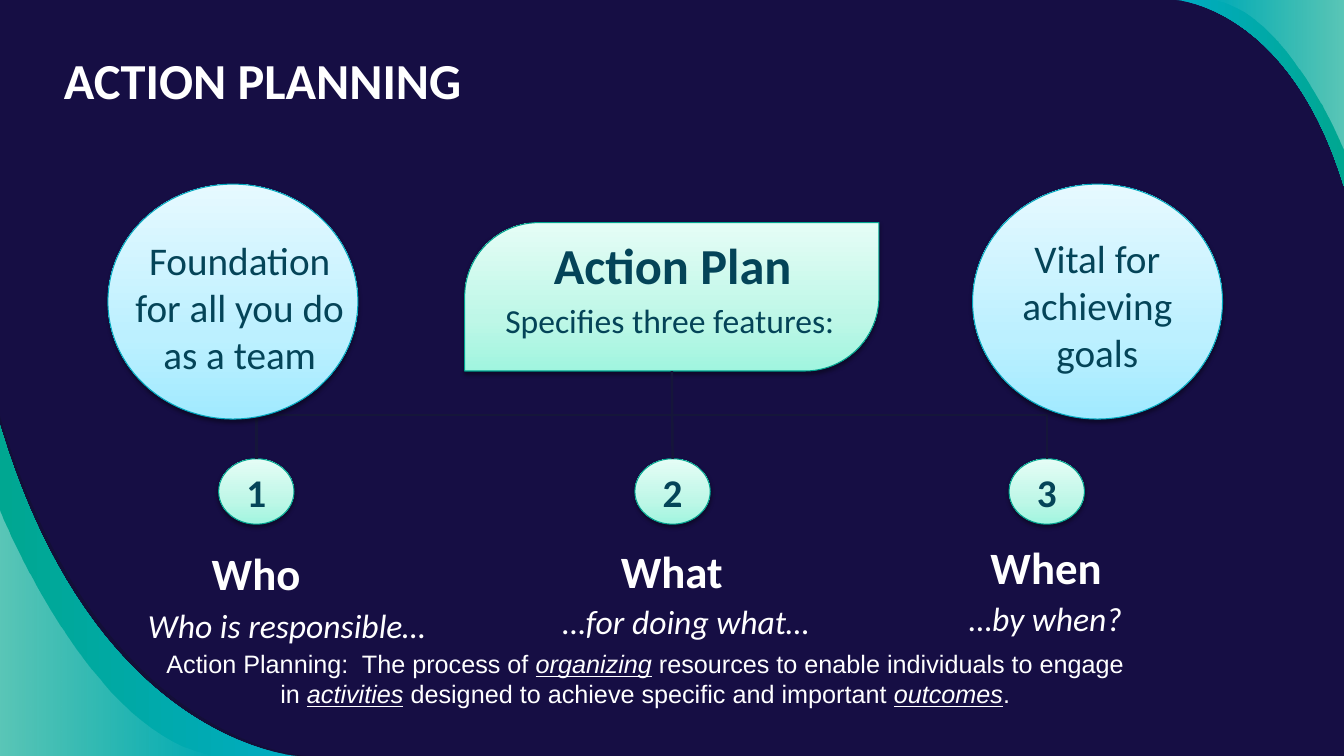
from lxml import etree
from pptx import Presentation
from pptx.dml.color import RGBColor
from pptx.enum.shapes import MSO_CONNECTOR, MSO_SHAPE
from pptx.enum.text import MSO_ANCHOR, PP_ALIGN
from pptx.oxml.ns import qn
from pptx.util import Cm, Pt

STRAIGHT, ELBOW = MSO_CONNECTOR.STRAIGHT, MSO_CONNECTOR.ELBOW
OVAL, LEAF = MSO_SHAPE.OVAL, MSO_SHAPE.ROUND_2_DIAG_RECTANGLE
TOP, MIDDLE, BOTTOM = MSO_ANCHOR.TOP, MSO_ANCHOR.MIDDLE, MSO_ANCHOR.BOTTOM
LEFT, CENTER = PP_ALIGN.LEFT, PP_ALIGN.CENTER

WIDTH, HEIGHT = 33.87, 19.05
WHITE, INK, NIGHT, WIRE = "FFFFFF", "044458", "160E44", "15163A"
MINT = [(0, "A0F5DF", 100), (35, "BEF7E7", 100), (100, "E5FDF6", 100)]
SKY = [(0, "A1EAFF", 100), (35, "BCF0FF", 100), (100, "E6F9FF", 100)]
TEAL = [(0, "00ACC2", 100), (100, "00A791", 100)]
GLOW = [(0, WHITE, 0), (100, WHITE, 36)]
SHADE = [(0, "12102F", 54), (100, "12102F", 54)]
MINT_EDGE, SKY_EDGE = "00A38E", "00A8BE"

LOWER_LEFT, UPPER_RIGHT = (0, HEIGHT), (WIDTH, 0)
SWOOSHES = [
    (LOWER_LEFT, [(0, 10.49), (2.49, 18.77), (7.7, HEIGHT), (7.7, HEIGHT)], SHADE, 180),
    (LOWER_LEFT, [(0, 10.72), (2.41, 18.77), (7.49, HEIGHT), (7.49, HEIGHT)], TEAL, 180),
    (LOWER_LEFT, [(0, 12.85), (0, 12.85), (2.31, 18.67), (5.49, HEIGHT)], GLOW, 180),
    (UPPER_RIGHT, [(29.64, 0), (29.64, 0), (32.49, 0.15), (WIDTH, 4.7)], TEAL, 0),
    (UPPER_RIGHT, [(30.51, 0), (32.44, 0.23), (WIDTH, 3.78), (WIDTH, 3.78)], GLOW, 0),
]
FEATURES = [
    ("1", 5.51, "Who", (4.23, 13.79, 4.45, 1.65),
     "Who is responsible…", (3.28, 14.91, 7.9, 2.46)),
    ("2", 16, "What", (14.07, 13.74, 5.72, 1.65),
     "…for doing what…", (13.34, 14.81, 7.9, 2.46)),
    ("3", 25.43, "When", (24.14, 13.64, 4.45, 1.65),
     "…by when?", (22.4, 14.73, 7.9, 2.46)),
]
CIRCLES = [
    (2.72, "Foundation for all you do as a team", (2.79, 5.84, 6.5, 3.78)),
    (24.51, "Vital for achieving goals", (24.85, 6.53, 5.61, 2.29)),
]
DEFINITION = [
    ("Action Planning:  The process of ", False), ("organizing", True),
    (" resources to enable individuals to engage in ", False), ("activities", True),
    (" designed to achieve specific and important ", False), ("outcomes", True),
    (".", False),
]
BADGE_TOP, BADGE_WIDTH, BADGE_HEIGHT = 11.56, 1.9, 1.65
PLAN = (11.71, 5.61, 10.44, 3.74)


def color(text):
    return RGBColor.from_string(text)


def add_xml(parent, tag, **attributes):
    child = etree.SubElement(parent, qn(tag))
    for name, value in attributes.items():
        child.set(name, str(value))
    return child


def paint(shape, stops, angle):
    shape.fill.gradient()
    gradient = shape._element.spPr.find(qn("a:gradFill"))
    stop_list = gradient.find(qn("a:gsLst"))
    for stop in list(stop_list):
        stop_list.remove(stop)
    for position, shade, opacity in stops:
        stop = add_xml(stop_list, "a:gs", pos=position * 1000)
        tone = add_xml(stop, "a:srgbClr", val=shade)
        if opacity < 100:
            add_xml(tone, "a:alpha", val=opacity * 1000)
    gradient.find(qn("a:lin")).set("ang", str(angle * 60000))


def bend(shape):
    outline = next(shape._element.iter(qn("a:moveTo"))).getparent()
    curve = etree.Element(qn("a:cubicBezTo"))
    for segment in outline.findall(qn("a:lnTo"))[:3]:
        curve.append(segment[0])
        outline.remove(segment)
    outline.insert(1, curve)


def add_swoosh(page, corner, curve, stops, angle):
    points = [(Cm(x), Cm(y)) for x, y in curve + [corner]]
    builder = page.shapes.build_freeform(*points[0], scale=1.0)
    builder.add_line_segments(points[1:], close=True)
    swoosh = builder.convert_to_shape()
    bend(swoosh)
    paint(swoosh, stops, angle)
    swoosh.line.fill.background()
    swoosh.shadow.inherit = False


def add_panel(page, kind, place, stops, edge):
    panel = page.shapes.add_shape(kind, *map(Cm, place))
    paint(panel, stops, 270)
    panel.line.color.rgb = color(edge)
    panel.line.width = Pt(0.75)
    panel.shadow.inherit = False
    effects = panel._element.spPr.find(qn("a:effectLst"))
    shadow = add_xml(effects, "a:outerShdw", blurRad=Pt(3.1), dist=Pt(1.6),
                     dir=5400000, rotWithShape=0)
    add_xml(add_xml(shadow, "a:srgbClr", val="000000"), "a:alpha", val=38000)
    return panel


def add_span(para, text, size, ink, font="Calibri", bold=False, italic=False,
             underline=False):
    span = para.add_run()
    span.text = text
    span.font.name = font
    span.font.size = Pt(size)
    span.font.color.rgb = color(ink)
    span.font.bold = bold
    span.font.italic = italic
    span.font.underline = underline


def prepare(box, anchor=TOP, align=CENTER, before=0, after=0, inset=0.33):
    frame = box.text_frame
    frame.word_wrap = True
    frame.vertical_anchor = anchor
    frame.margin_left = frame.margin_right = Cm(inset)
    frame.margin_top = frame.margin_bottom = Cm(0.33)
    para = frame.paragraphs[0]
    para.alignment = align
    para.space_before, para.space_after = Pt(before), Pt(after)
    return para


def add_label(page, place, text, size, ink, anchor=TOP, before=0, after=0, **style):
    box = page.shapes.add_textbox(*map(Cm, place))
    add_span(prepare(box, anchor, before=before, after=after), text, size, ink, **style)


def add_title(page, text):
    title = page.shapes.title
    title.left, title.top, title.width, title.height = map(Cm, (1.28, 0.9, 26.06, 2.34))
    add_span(prepare(title, align=LEFT), text, 36, WHITE, bold=True)


def add_wire(page, kind, start, end):
    wire = page.shapes.add_connector(kind, *map(Cm, start + end))
    wire.line.color.rgb = color(WIRE)
    wire.line.width = Pt(1.75)
    add_xml(wire._element.spPr, "a:effectLst")
    return wire


def add_branch(page, start, end):
    drop, reach = end[1] - start[1], abs(end[0] - start[0])
    middle_x, middle_y = (start[0] + end[0]) / 2, (start[1] + end[1]) / 2
    side = 1 if end[0] > start[0] else -1
    wire = add_wire(page, ELBOW,
                    (middle_x + side * drop / 2, middle_y - reach / 2),
                    (middle_x - side * drop / 2, middle_y + reach / 2))
    turn = 270 if side > 0 else 90
    wire._element.spPr.find(qn("a:xfrm")).set("rot", str(turn * 60000))


def add_features(page):
    badges = []
    for number, left, heading, heading_place, detail, detail_place in FEATURES:
        add_label(page, detail_place, detail, 24, WHITE, after=21.3, italic=True)
        add_label(page, heading_place, heading, 32, WHITE, BOTTOM, bold=True)
        badge = add_panel(page, OVAL, (left, BADGE_TOP, BADGE_WIDTH, BADGE_HEIGHT),
                          MINT, MINT_EDGE)
        add_span(prepare(badge, MIDDLE), number, 28, INK, bold=True)
        badges.append(badge)
    root = (PLAN[0] + PLAN[2] / 2, PLAN[1] + PLAN[3])
    who, what, when = [(feature[1] + BADGE_WIDTH / 2, BADGE_TOP) for feature in FEATURES]
    add_branch(page, root, who)
    add_branch(page, root, when)
    add_wire(page, STRAIGHT, root, what).end_connect(badges[1], 0)


def add_definition(page):
    box = page.shapes.add_textbox(*map(Cm, (3.74, 16.21, 25.04, 1.8)))
    para = prepare(box, before=8, inset=0.25)
    box.text_frame.margin_top = box.text_frame.margin_bottom = Cm(0.13)
    for text, key in DEFINITION:
        add_span(para, text, 18, WHITE, "Arial", italic=key, underline=key)


def main():
    deck = Presentation()
    deck.slide_width, deck.slide_height = Cm(WIDTH), Cm(HEIGHT)
    page = deck.slides.add_slide(deck.slide_layouts[5])
    page.background.fill.solid()
    page.background.fill.fore_color.rgb = color(NIGHT)
    for swoosh in SWOOSHES:
        add_swoosh(page, *swoosh)
    add_title(page, "ACTION PLANNING")
    plan = add_panel(page, LEAF, PLAN, MINT, MINT_EDGE)
    plan.adjustments[0], plan.adjustments[1] = 0.5, 0
    add_label(page, (11.66, 7.22, 10.44, 2.06), "Specifies three features:", 24, INK,
              before=8)
    add_label(page, (12.8, 6.26, 8.31, 1.5), "Action Plan", 36, INK, BOTTOM, bold=True)
    add_features(page)
    for left, text, place in CIRCLES:
        add_panel(page, OVAL, (left, 4.64, 6.3, 5.92), SKY, SKY_EDGE)
        add_label(page, place, text, 28, INK, MIDDLE)
    add_definition(page)
    deck.save("out.pptx")


if __name__ == "__main__":
    main()
